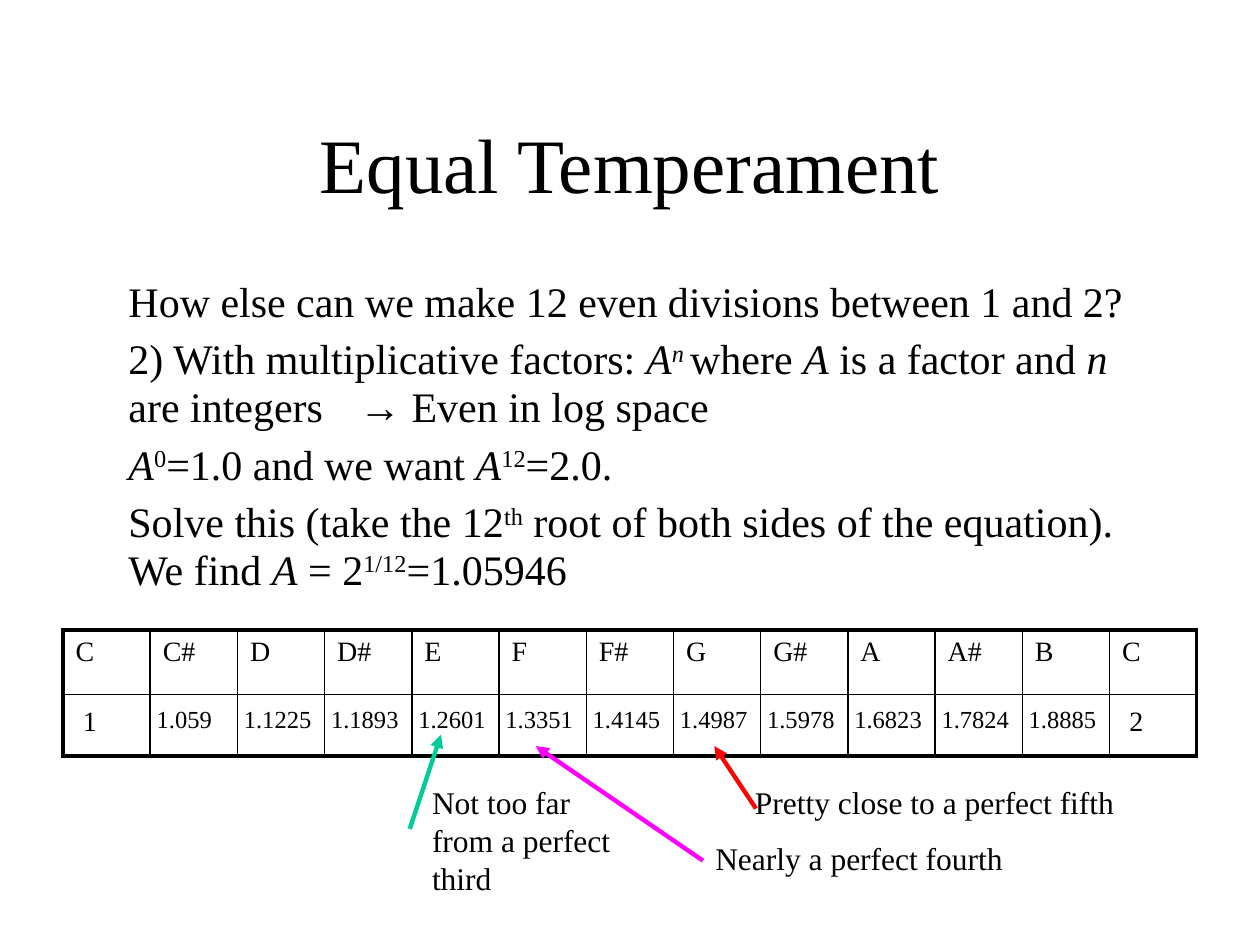
from dataclasses import dataclass

from lxml import etree
from pptx import Presentation
from pptx.dml.color import RGBColor
from pptx.enum.shapes import MSO_CONNECTOR
from pptx.enum.text import MSO_ANCHOR, PP_ALIGN
from pptx.oxml.ns import qn
from pptx.slide import Slide
from pptx.util import Cm, Pt

STRAIGHT = MSO_CONNECTOR.STRAIGHT
LEFT, CENTER = PP_ALIGN.LEFT, PP_ALIGN.CENTER
TOP, MIDDLE = MSO_ANCHOR.TOP, MSO_ANCHOR.MIDDLE

NOTES = ["C", "C#", "D", "D#", "E", "F", "F#", "G", "G#", "A", "A#", "B", "C"]
RATIOS = ["1", "1.059", "1.1225", "1.1893", "1.2601", "1.3351", "1.4145",
          "1.4987", "1.5978", "1.6823", "1.7824", "1.8885", "2"]

ITALIC, RAISED, RAISED_ITALIC = "i", "s", "is"
BODY = [
    [("How else can we make 12 even divisions between 1 and 2?", "")],
    [("2) With multiplicative factors: ", ""), ("A", ITALIC), ("n ", RAISED_ITALIC),
     ("where ", ""), ("A", ITALIC), (" is a factor and ", ""), ("n", ITALIC),
     (" are integers\t→ Even in log space", "")],
    [("A", ITALIC), ("0", RAISED), ("=1.0 and we want ", ""),
     ("A", ITALIC), ("12", RAISED), ("=2.0.", "")],
    [("Solve this (take the 12", ""), ("th", RAISED),
     (" root of both sides of the equation). We find ", ""), ("A", ITALIC),
     (" = 2", ""), ("1/12", RAISED), ("=1.05946", "")],
]


def color(value):
    return RGBColor.from_string(value)


@dataclass
class SlideBuilder:
    slide: Slide
    font: str = "Times New Roman"
    ink: str = "000000"
    outer_width: float = 2.25
    inner_width: float = 1
    arrow_width: float = 2.5

    def add_runs(self, paragraph, runs, size):
        for text, style in runs:
            run = paragraph.add_run()
            run.text = text
            run.font.name = self.font
            run.font.size = Pt(size)
            run.font.color.rgb = color(self.ink)
            if ITALIC in style:
                run.font.italic = True
            if RAISED in style:
                run.font._element.set("baseline", "30000")

    def text(self, box, paragraphs, size, gap=0, spacing=1.0, align=LEFT,
             anchor=TOP, tab=None, first_indent=None):
        shape = self.slide.shapes.add_textbox(*map(Cm, box))
        frame = shape.text_frame
        frame.word_wrap = True
        frame.vertical_anchor = anchor
        for index, runs in enumerate(paragraphs):
            paragraph = frame.paragraphs[0] if index == 0 else frame.add_paragraph()
            properties = paragraph._p.get_or_add_pPr()
            if tab:
                stops = etree.SubElement(properties, qn("a:tabLst"))
                etree.SubElement(stops, qn("a:tab"), pos=str(Cm(tab)), algn="l")
            if first_indent and index == 0:
                properties.set("marL", str(Cm(first_indent)))
            paragraph.alignment = align
            paragraph.line_spacing = spacing
            paragraph.space_before = Pt(gap if index else 0)
            self.add_runs(paragraph, runs, size)

    def border(self, cell, side, width):
        line = etree.SubElement(cell._tc.get_or_add_tcPr(), qn(f"a:ln{side}"),
                                w=str(Pt(width)))
        fill = etree.SubElement(line, qn("a:solidFill"))
        etree.SubElement(fill, qn("a:srgbClr"), val=self.ink)

    def table(self, box, heights, rows):
        last_row, last_column = len(rows) - 1, len(rows[0]) - 1
        table = self.slide.shapes.add_table(
            len(rows), len(rows[0]), *map(Cm, box)).table
        table.first_row = table.horz_banding = False
        for column in table.columns:
            column.width = Cm(box[2] / len(rows[0]))
        for row_index, values in enumerate(rows):
            table.rows[row_index].height = Cm(heights[row_index])
            for column_index, value in enumerate(values):
                cell = table.cell(row_index, column_index)
                edges = {"L": column_index == 0, "R": column_index == last_column,
                         "T": row_index == 0, "B": row_index == last_row}
                for side, outer in edges.items():
                    self.border(cell, side, self.outer_width if outer else self.inner_width)
                cell.fill.background()
                paragraph = cell.text_frame.paragraphs[0]
                size = 16
                if row_index == last_row:
                    octave = column_index in (0, last_column)
                    size = 16 if octave else 14
                    cell.margin_left = Cm(0.4 if octave else 0.13)
                    cell.margin_right = Cm(0.13)
                    paragraph.line_spacing = 1.2
                self.add_runs(paragraph, [(value, "")], size)

    def arrow(self, start, end, stroke):
        connector = self.slide.shapes.add_connector(STRAIGHT, *map(Cm, start + end))
        connector.line.color.rgb = color(stroke)
        connector.line.width = Pt(self.arrow_width)
        properties = connector._element.spPr
        etree.SubElement(properties.find(qn("a:ln")), qn("a:tailEnd"), type="triangle")
        etree.SubElement(properties, qn("a:effectLst"))


def main():
    presentation = Presentation()
    presentation.slide_width, presentation.slide_height = Cm(25.4), Cm(19.05)
    slide = presentation.slides.add_slide(presentation.slide_layouts[6])
    builder = SlideBuilder(slide)

    builder.text((1.9, 1.7, 21.6, 3.18), [[("Equal Temperament", "")]], 44,
                 align=CENTER, anchor=MIDDLE)
    builder.table((1.27, 12.7, 22.86, 2.54), (1.3, 1.24), [NOTES, RATIOS])
    builder.text((2.34, 5.5, 21.17, 6.65), BODY, 24, gap=5.5, spacing=0.95, tab=4.65)
    builder.arrow((15.24, 16.3), (14.4, 15.04), "FF0000")
    builder.text((14.17, 15.67, 9.53, 2.16),
                 [[("Pretty close to a perfect fifth", "")],
                  [("Nearly a perfect fourth", "")]],
                 18, gap=10, first_indent=0.8)
    builder.arrow((8.26, 16.71), (8.89, 14.81), "00CC99")
    builder.text((8.46, 15.67, 4.65, 2.54),
                 [[("Not too far from a perfect third", "")]], 18)
    builder.arrow((14.17, 17.35), (10.8, 15.04), "FF00FF")

    presentation.save("out.pptx")


if __name__ == "__main__":
    main()
